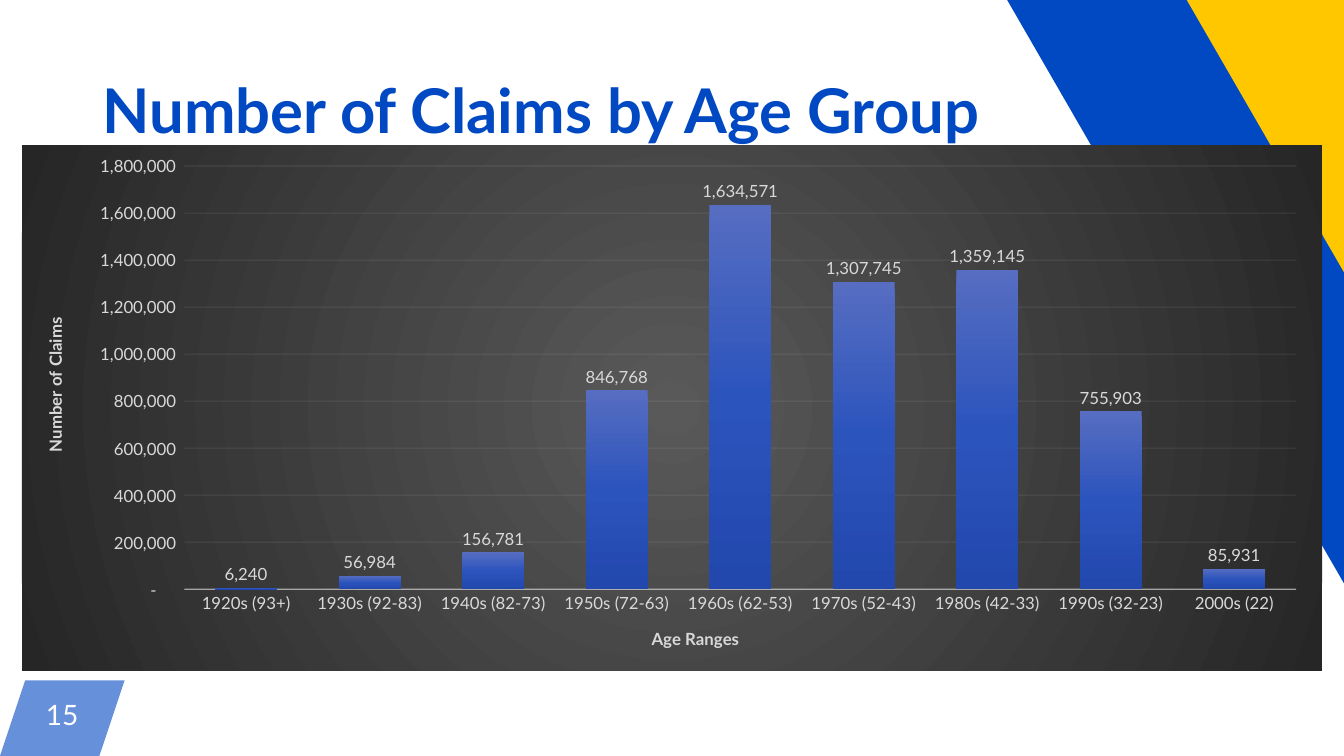
"""Build the slide showing the number of claims by age group."""
from lxml.etree import SubElement
from pptx import Presentation
from pptx.chart.data import CategoryChartData
from pptx.dml.color import RGBColor
from pptx.enum.chart import XL_CHART_TYPE as ChartType
from pptx.enum.chart import XL_LABEL_POSITION as LabelPosition
from pptx.enum.chart import XL_TICK_MARK as TickMark
from pptx.enum.text import MSO_ANCHOR as Anchor
from pptx.enum.text import MSO_AUTO_SIZE as AutoSize
from pptx.enum.text import PP_ALIGN as Align
from pptx.oxml import parse_xml
from pptx.oxml.ns import nsdecls, qn
from pptx.util import Pt

TITLE = "Number of Claims by Age Group"
PAGE_NUMBER = "15"
CLAIMS = {
    "1920s (93+)": 6240,
    "1930s (92-83)": 56984,
    "1940s (82-73)": 156781,
    "1950s (72-63)": 846768,
    "1960s (62-53)": 1634571,
    "1970s (52-43)": 1307745,
    "1980s (42-33)": 1359145,
    "1990s (32-23)": 755903,
    "2000s (22)": 85931,
}
CATEGORY_TITLE = "Age Ranges"
VALUE_TITLE = "Number of Claims"
NUMBER_FORMAT = '_(* #,##0_);_(* \\(#,##0\\);_(* "-"??_);_('
FONT = "Lato"
COLORS = {
    "blue": "0049C2",
    "yellow": "FFC700",
    "white": "FFFFFF",
    "label": "D9D9D9",
    "line": "F2F2F2",
}
BAR_STOPS = [(0, "566DC1"), (50, "2C54BD"), (100, "2248AD")]
BACKDROP_STOPS = [(0, "595959"), (100, "262626")]
BAR_DIRECTION = '<a:lin ang="5400000" scaled="0"/>'
BACKDROP_DIRECTION = (
    '<a:path path="circle">'
    '<a:fillToRect l="50000" t="50000" r="50000" b="50000"/></a:path>'
)
PAGE_TAB = [(18, 486), (89, 486), (71, 540), (0, 540)]
BANDS = [
    ("yellow", 330.2, (920.2, -238.3, 141.8, 706.3)),
    ("blue", 330, (851, -140.4, 110.9, 706.3)),
]


def rgb(name):
    return RGBColor.from_string(COLORS[name])


def set_font(font, size, color, bold=False):
    font.name, font.size, font.bold = FONT, Pt(size), bold
    font.color.rgb = rgb(color)


def set_opacity(element, percent):
    for color in element.iter(qn("a:srgbClr")):
        SubElement(color, qn("a:alpha")).set("val", str(percent * 1000))


def style_line(line, width, opacity):
    line.color.rgb = rgb("line")
    line.width = Pt(width)
    set_opacity(line._ln, opacity)


def gradient(stops, direction):
    marks = "".join(
        f'<a:gs pos="{position * 1000}"><a:srgbClr val="{color}"/></a:gs>'
        for position, color in stops
    )
    return parse_xml(
        f'<a:gradFill {nsdecls("a")} rotWithShape="1">'
        f"<a:gsLst>{marks}</a:gsLst>{direction}</a:gradFill>"
    )


def set_layout(parent, left, top, width=None, height=None):
    inner = '<c:layoutTarget val="inner"/>' if width else ""
    extent = f'<c:w val="{width}"/><c:h val="{height}"/>' if width else ""
    layout = parse_xml(
        f'<c:layout {nsdecls("c")}><c:manualLayout>{inner}'
        '<c:xMode val="edge"/><c:yMode val="edge"/>'
        f'<c:x val="{left}"/><c:y val="{top}"/>{extent}'
        "</c:manualLayout></c:layout>"
    )
    for old in parent.findall(qn("c:layout")):
        parent.remove(old)
    text = parent.find(qn("c:tx"))
    if text is None:
        parent.insert(0, layout)
    else:
        text.addnext(layout)


def add_polygon(page, color, points):
    builder = page.shapes.build_freeform(*points[0], scale=Pt(1))
    builder.add_line_segments(points[1:], close=True)
    shape = builder.convert_to_shape()
    shape.shadow.inherit = False
    shape.fill.solid()
    shape.fill.fore_color.rgb = rgb(color)
    shape.line.fill.background()
    return shape


def add_band(page, color, angle, frame):
    left, top, width, height = frame
    right, bottom = left + width, top + height
    corners = [(left, top), (right, top), (right, bottom), (left, bottom)]
    add_polygon(page, color, corners).rotation = angle


def add_title(page):
    title = page.shapes.title
    title.left, title.top, title.width, title.height = Pt(66), Pt(29), Pt(828), Pt(104)
    frame = title.text_frame
    frame.text = TITLE
    frame.auto_size = AutoSize.NONE
    frame.vertical_anchor = Anchor.MIDDLE
    para = frame.paragraphs[0]
    para.alignment, para.line_spacing = Align.LEFT, 0.9
    set_font(para.font, 44, "blue", True)


def add_page_number(page):
    box = page.shapes.add_textbox(Pt(18), Pt(486), Pt(53), Pt(54))
    frame = box.text_frame
    frame.word_wrap = True
    frame.vertical_anchor = Anchor.MIDDLE
    frame.margin_left = frame.margin_right = Pt(3)
    frame.margin_top = frame.margin_bottom = Pt(3)
    para = frame.paragraphs[0]
    para.text = PAGE_NUMBER
    para.alignment, para.line_spacing = Align.CENTER, Pt(17.7)
    set_font(para.font, 20, "white")


def style_axis(axis, title, left, top):
    axis.major_tick_mark = axis.minor_tick_mark = TickMark.NONE
    set_font(axis.tick_labels.font, 12, "label")
    frame = axis.axis_title.text_frame
    frame.text = title
    set_font(frame.paragraphs[0].font, 12, "label", True)
    set_layout(axis.axis_title._element, left, top)


def add_claims_chart(page):
    data = CategoryChartData()
    data.categories = list(CLAIMS)
    data.add_series("Series 1", list(CLAIMS.values()))
    chart = page.shapes.add_chart(
        ChartType.COLUMN_CLUSTERED, Pt(15.6), Pt(103.6), Pt(928.8), Pt(375.6), data
    ).chart
    chart.has_legend = chart.has_title = False
    set_font(chart.font, 12, "label")
    backdrop = parse_xml(f'<c:spPr {nsdecls("c", "a")}><a:ln><a:noFill/></a:ln></c:spPr>')
    backdrop.insert(0, gradient(BACKDROP_STOPS, BACKDROP_DIRECTION))
    body = chart._chartSpace.find(qn("c:chart"))
    body.addnext(backdrop)
    set_layout(body.find(qn("c:plotArea")), 0.125, 0.04, 0.855, 0.805)

    plot = chart.plots[0]
    plot.gap_width, plot.overlap, plot.vary_by_categories = 100, -24, False
    bars = plot.series[0]
    bars._element.get_or_add_spPr().insert(0, gradient(BAR_STOPS, BAR_DIRECTION))
    labels = bars.data_labels
    labels.show_value = True
    labels.position = LabelPosition.OUTSIDE_END
    labels.number_format, labels.number_format_is_linked = NUMBER_FORMAT, False
    set_font(labels.font, 12, "label")

    ages, counts = chart.category_axis, chart.value_axis
    style_axis(ages, CATEGORY_TITLE, 0.482, 0.911)
    style_line(ages.format.line, 1, 54)
    style_axis(counts, VALUE_TITLE, 0.014, 0.322)
    counts.minimum_scale, counts.maximum_scale, counts.major_unit = 0, 1800000, 200000
    counts.tick_labels.number_format = NUMBER_FORMAT
    counts.tick_labels.number_format_is_linked = False
    counts.format.line.fill.background()
    style_line(counts.major_gridlines.format.line, 0.75, 10)


def main():
    deck = Presentation()
    deck.slide_width, deck.slide_height = Pt(960), Pt(540)
    page = deck.slides.add_slide(deck.slide_layouts[5])
    set_opacity(add_polygon(page, "blue", PAGE_TAB)._element.spPr, 60)
    add_page_number(page)
    for color, angle, frame in BANDS:
        add_band(page, color, angle, frame)
    add_title(page)
    add_claims_chart(page)
    deck.save("out.pptx")


if __name__ == "__main__":
    main()
